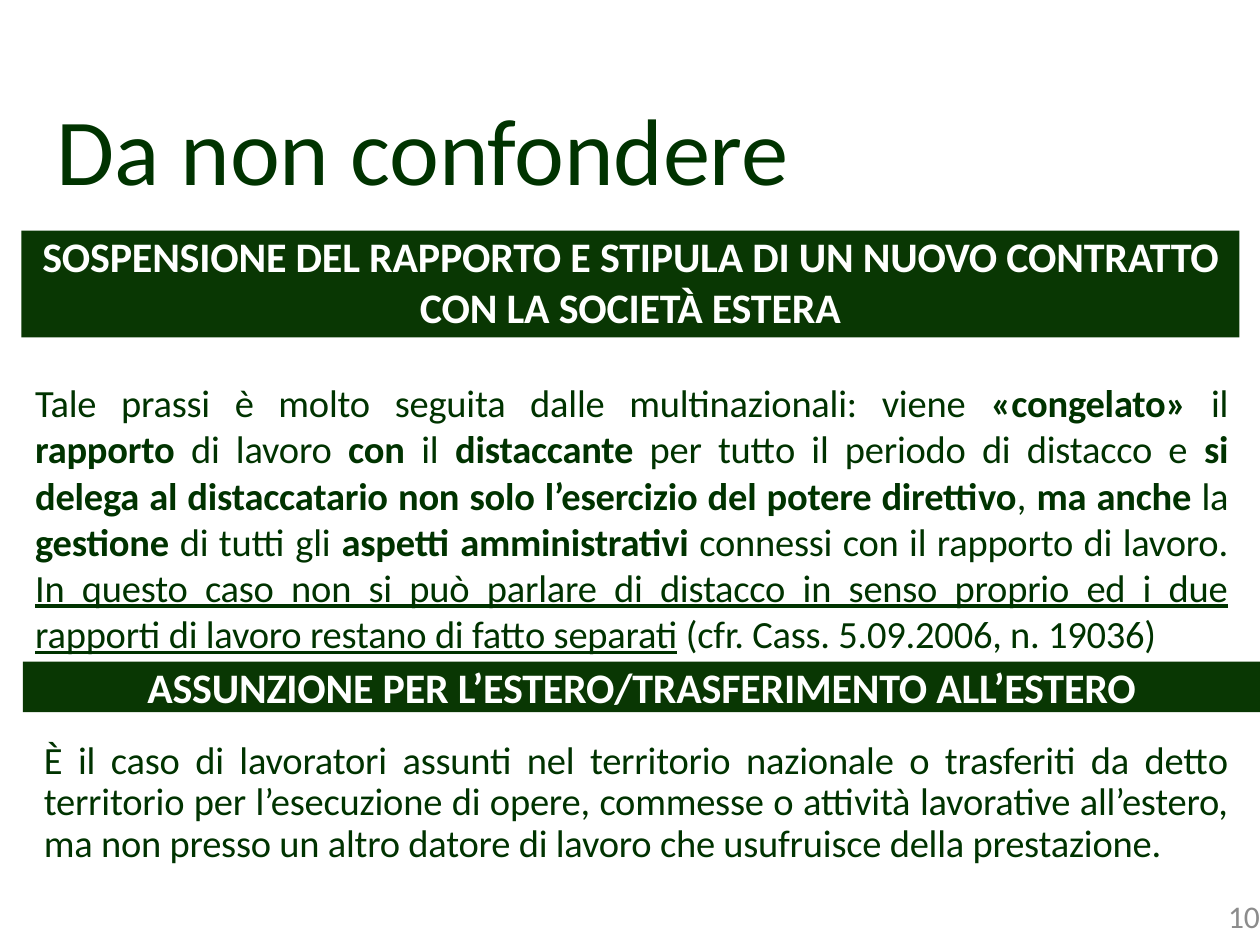
from pptx import Presentation
from pptx.dml.color import RGBColor
from pptx.enum import shapes, text
from pptx.util import Pt

FONT = "Calibri"
DARK_GREEN, BAND_GREEN, WHITE, GREY = "003300", "093703", "FFFFFF", "8C8C8C"
ALIGN = text.PP_ALIGN
TIGHT = -10  # letter spacing, hundredths of a point

# Words between asterisks are bold, words between underscores underlined
SUSPENSION = (
    "Tale prassi è molto seguita dalle multinazionali: viene *«congelato»* il "
    "*rapporto *di lavoro *con *il *distaccante *per tutto il periodo di distacco e "
    "*si delega al distaccatario non solo l’esercizio del potere direttivo*, "
    "*ma anche *la *gestione *di tutti gli *aspetti amministrativi *connessi con il "
    "rapporto di lavoro. _In questo caso non si può parlare di distacco in senso "
    "proprio ed i due rapporti di lavoro restano di fatto separati_ "
    "(cfr. Cass. 5.09.2006, n. 19036)"
)
HIRING = (
    "È il caso di lavoratori assunti nel territorio nazionale o trasferiti da detto "
    "territorio per l’esecuzione di opere, commesse o attività lavorative all’estero, "
    "ma non presso un altro datore di lavoro che usufruisce della prestazione."
)


def rgb(value):
    return RGBColor.from_string(value)


def place(shape, box):
    for side, length in zip(("left", "top", "width", "height"), box):
        setattr(shape, side, Pt(length))


def write(shape, content, size, color, align, bold=False, inset=(0, 0),
          spacing=TIGHT, **paragraph_format):
    """Fill a shape with one paragraph of marked-up words."""
    frame = shape.text_frame
    across, down = (Pt(length) for length in inset)
    frame_format = {
        "word_wrap": True, "auto_size": text.MSO_AUTO_SIZE.NONE,
        "vertical_anchor": text.MSO_ANCHOR.TOP,
        "margin_left": across, "margin_right": across,
        "margin_top": down, "margin_bottom": down,
    }
    for name, value in frame_format.items():
        setattr(frame, name, value)

    paragraph = frame.paragraphs[0]
    for name, value in {"alignment": align, **paragraph_format}.items():
        setattr(paragraph, name, value)

    for i, underline_part in enumerate(content.split("_")):
        for j, words in enumerate(underline_part.split("*")):
            if not words:
                continue
            run = paragraph.add_run()
            run.text = words
            run_format = {"name": FONT, "size": Pt(size),
                          "bold": bold or j % 2 == 1, "underline": i % 2 == 1}
            for name, value in run_format.items():
                setattr(run.font, name, value)
            run.font.color.rgb = rgb(color)
            if spacing:
                run.font._element.set("spc", str(spacing))


def add_title(slide, box, content):
    title = slide.shapes.title
    place(title, box)
    write(title, content, 54, DARK_GREEN, ALIGN.JUSTIFY)


def add_band(slide, box, heading):
    band = slide.shapes.add_shape(shapes.MSO_SHAPE.RECTANGLE, *map(Pt, box))
    band.shadow.inherit = False
    band.fill.solid()
    band.fill.fore_color.rgb = rgb(BAND_GREEN)
    band.line.fill.background()
    write(band, heading, 24, WHITE, ALIGN.CENTER, bold=True)


def add_body(slide, box, content, **paragraph_format):
    body = slide.shapes.add_textbox(*map(Pt, box))
    write(body, content, 22, DARK_GREEN, ALIGN.JUSTIFY, inset=(7.2, 3.6),
          **paragraph_format)


def add_page_number(slide, box, number):
    page = slide.shapes.add_textbox(*map(Pt, box))
    write(page, number, 18, GREY, ALIGN.RIGHT, spacing=0)


def main():
    deck = Presentation()
    deck.slide_width, deck.slide_height = Pt(720), Pt(540)
    slide = deck.slides.add_slide(deck.slide_layouts[5])

    add_title(slide, (32.4, 51.8, 651.6, 65.5), "Da non confondere")

    # Suspension and new contract
    add_band(slide, (12.2, 131.8, 696, 61),
             "SOSPENSIONE DEL RAPPORTO E STIPULA DI UN NUOVO CONTRATTO "
             "CON LA SOCIETÀ ESTERA")
    add_body(slide, (13, 213.1, 696, 167), SUSPENSION)

    add_page_number(slide, (554.4, 512.6, 165.6, 21.6), "10")

    # Hiring for or transfer to a foreign country
    add_band(slide, (13, 378, 707, 29),
             "ASSUNZIONE PER L’ESTERO/TRASFERIMENTO ALL’ESTERO")
    add_body(slide, (18, 419.8, 691, 103), HIRING,
             line_spacing=0.9, space_after=Pt(6))

    deck.save("out.pptx")


if __name__ == "__main__":
    main()
